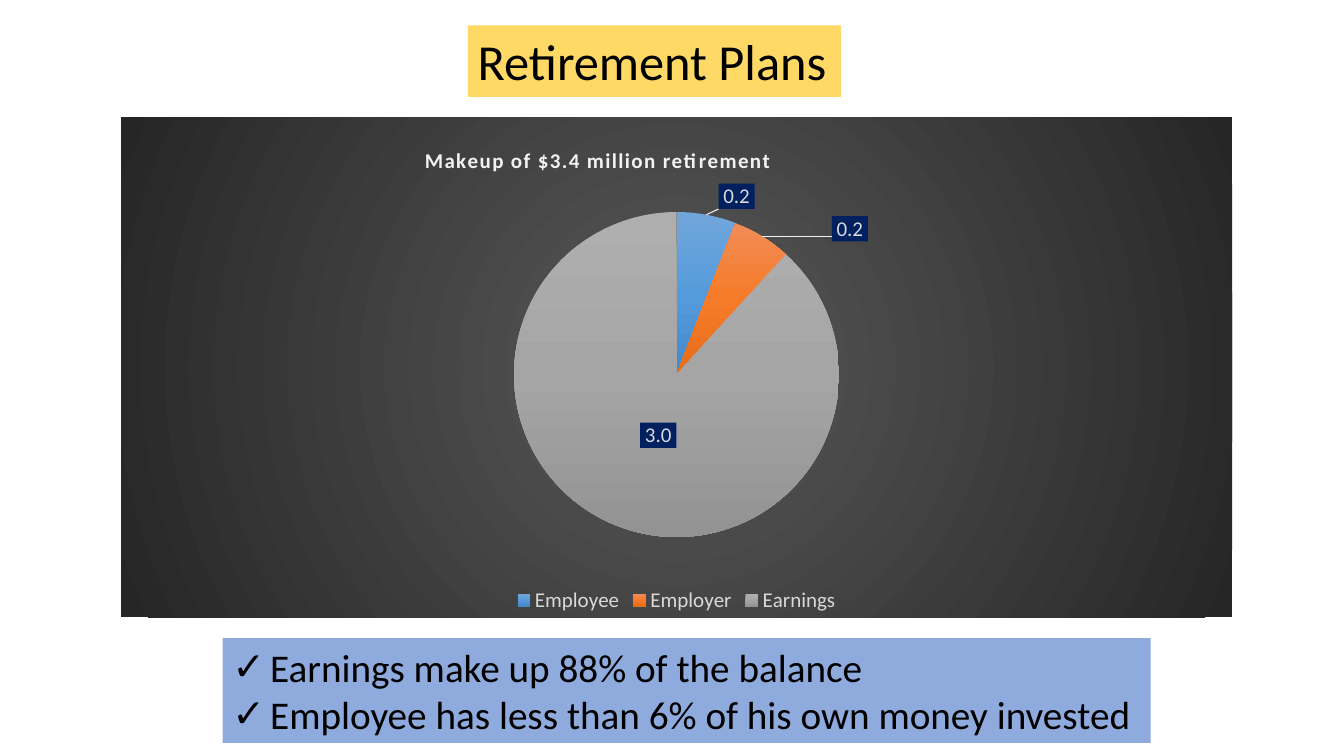
from copy import deepcopy
from dataclasses import dataclass

from pptx import Presentation
from pptx.chart.data import CategoryChartData
from pptx.dml.color import RGBColor
from pptx.enum.chart import XL_CHART_TYPE, XL_LABEL_POSITION, XL_LEGEND_POSITION
from pptx.enum.text import MSO_AUTO_SIZE
from pptx.oxml import parse_xml
from pptx.oxml.ns import nsdecls
from pptx.util import Cm, Pt

PIE = XL_CHART_TYPE.PIE
BOTTOM = XL_LEGEND_POSITION.BOTTOM
OUTSIDE, CENTER = XL_LABEL_POSITION.OUTSIDE_END, XL_LABEL_POSITION.CENTER
FIT_SHAPE = MSO_AUTO_SIZE.SHAPE_TO_FIT_TEXT
NAMES = nsdecls("c", "a")


@dataclass(frozen=True)
class Theme:
    """Colours, font and type sizes of the slide."""
    font: str = "Calibri"
    ink: str = "000000"
    title_fill: str = "FFD966"
    findings_fill: str = "8FAADC"
    label_fill: str = "002060"
    chart_title: str = "F2F2F2"
    chart_text: str = "D9D9D9"
    backdrop: tuple = ("595959", "262626")
    slices: tuple = (
        ("71A6DB", "559BDB", "448ACA"),
        ("F18C57", "F67B28", "E56C19"),
        ("AFAFAF", "A5A5A5", "939393"),
    )
    title_size: int = 36
    findings_size: int = 28
    chart_size: int = 15


THEME = Theme()
NUMBER_FORMAT = r'_(* #,##0.0_);_(* \(#,##0.0\);_(* "-"??_);_(@_)'
SHARES = {"Employee": 0.2, "Employer": 0.2, "Earnings": 3.0}
LABEL_PLACES = ((OUTSIDE, 0.01, 0), (OUTSIDE, 0.06, 0.02), (CENTER, 0.01, -0.03))
FINDINGS = (
    "Earnings make up 88% of the balance",
    "Employee has less than 6% of his own money invested",
)


def style_font(font, size, color, bold=False):
    """Set face, size, colour and weight of a font."""
    font.name, font.size, font.bold = THEME.font, Pt(size), bold
    font.color.rgb = RGBColor.from_string(color)


def add_bullet(para, mark, indent):
    """Give a paragraph a hanging bullet mark."""
    properties = para._p.get_or_add_pPr()
    properties.set("marL", str(indent))
    properties.set("indent", str(-indent))
    properties.append(parse_xml(f'<a:buFont {NAMES} typeface="{THEME.font}"/>'))
    properties.append(parse_xml(f'<a:buChar {NAMES} char="{mark}"/>'))


def add_text(page, box, lines, *, size, fill, mark=None):
    """Add a filled text box with one paragraph per line."""
    shape = page.shapes.add_textbox(*box)
    shape.fill.solid()
    shape.fill.fore_color.rgb = RGBColor.from_string(fill)
    frame = shape.text_frame
    frame.word_wrap = False
    frame.auto_size = FIT_SHAPE
    for number, line in enumerate(lines):
        para = frame.add_paragraph() if number else frame.paragraphs[0]
        if mark:
            add_bullet(para, mark, Cm(0.95))
        span = para.add_run()
        span.text = line
        style_font(span.font, size, THEME.ink)


def gradient(colors, direction):
    """Return a gradient fill with evenly spaced colours."""
    step = 100000 // (len(colors) - 1)
    stops = "".join(
        f'<a:gs pos="{number * step}"><a:srgbClr val="{color}"/></a:gs>'
        for number, color in enumerate(colors)
    )
    return parse_xml(f"<a:gradFill {NAMES}><a:gsLst>{stops}</a:gsLst>{direction}</a:gradFill>")


def set_layout(parent, index, **values):
    """Place a chart part by fractions of the chart area."""
    for old in parent.xpath("c:layout"):
        parent.remove(old)
    parts = "".join(f'<c:{name} val="{value}"/>' for name, value in values.items())
    parent.insert(index, parse_xml(
        f"<c:layout {NAMES}><c:manualLayout>{parts}</c:manualLayout></c:layout>"))


def style_chart_title(chart, text):
    """Add the spaced bold title to the chart."""
    title = chart.chart_title
    span = title.text_frame.paragraphs[0].add_run()
    span.text = text
    style_font(span.font, THEME.chart_size, THEME.chart_title, bold=True)
    span.font._element.set("spc", "100")
    title.include_in_layout = False
    set_layout(title._element, 1, xMode="edge", yMode="edge", x=0.27, y=0.05)


def style_labels(series):
    """Show the values in dark boxes at their places."""
    labels = series.data_labels
    labels.number_format = NUMBER_FORMAT
    labels.number_format_is_linked = False
    labels.show_value = True
    style_font(labels.font, THEME.chart_size, THEME.chart_text)
    element = labels._element
    element.xpath("c:txPr")[0].addprevious(parse_xml(
        f'<c:spPr {NAMES}><a:solidFill><a:srgbClr val="{THEME.label_fill}"/>'
        "</a:solidFill><a:ln><a:noFill/></a:ln></c:spPr>"))
    element.append(parse_xml(
        f'<c:leaderLines {NAMES}><c:spPr><a:ln w="9525"><a:solidFill>'
        f'<a:srgbClr val="{THEME.chart_title}"/></a:solidFill></a:ln></c:spPr></c:leaderLines>'))
    shared = element.xpath("c:numFmt | c:spPr | c:txPr")
    for number, (position, shift_x, shift_y) in enumerate(LABEL_PLACES):
        series.points[number].data_label.position = position
        label = element.xpath("c:dLbl")[number]
        for old in label.xpath("c:numFmt | c:spPr | c:txPr"):
            label.remove(old)
        set_layout(label, 1, x=shift_x, y=shift_y)
        for offset, part in enumerate(shared):
            label.insert(2 + offset, deepcopy(part))


def add_pie(page, box):
    """Add the pie chart of the retirement balance."""
    data = CategoryChartData(number_format="0.0")
    data.categories = list(SHARES)
    data.add_series("Series 1", list(SHARES.values()))
    chart = page.shapes.add_chart(PIE, *box, data).chart
    style_font(chart.font, THEME.chart_size, THEME.chart_text)
    style_chart_title(chart, "Makeup of $3.4 million retirement")

    chart.has_legend = True
    chart.legend.position = BOTTOM
    chart.legend.include_in_layout = False
    style_font(chart.legend.font, THEME.chart_size, THEME.chart_text)

    space = chart._chartSpace
    backdrop = parse_xml(f"<c:spPr {NAMES}><a:ln><a:noFill/></a:ln></c:spPr>")
    backdrop.insert(0, gradient(
        THEME.backdrop,
        '<a:path path="circle"><a:fillToRect l="50000" t="50000" r="50000" b="50000"/></a:path>'))
    space.xpath("c:txPr")[0].addprevious(backdrop)
    set_layout(space.xpath("c:chart/c:plotArea")[0], 0, layoutTarget="inner",
               xMode="edge", yMode="edge", x=0.35, y=0.19, w=0.3, h=0.65)

    plot = chart.plots[0]
    plot.vary_by_categories = True
    series = plot.series[0]
    for number, colors in enumerate(THEME.slices):
        properties = series._element.get_or_add_dPt_for_point(number).get_or_add_spPr()
        properties.append(gradient(colors, '<a:lin ang="5400000" scaled="0"/>'))
    style_labels(series)


def build_page(page):
    """Place the title, the chart and the findings."""
    add_text(page, (Cm(11.79), Cm(0.64), Cm(9.4), Cm(1.8)), ["Retirement Plans"],
             size=THEME.title_size, fill=THEME.title_fill)
    add_text(page, (Cm(5.61), Cm(16.08), Cm(23.39), Cm(2.64)), FINDINGS,
             size=THEME.findings_size, fill=THEME.findings_fill, mark="✓")
    add_pie(page, (Cm(3.05), Cm(2.95), Cm(28), Cm(12.6)))


def main():
    """Build and save the deck."""
    deck = Presentation()
    deck.slide_width, deck.slide_height = Cm(33.87), Cm(19.05)
    build_page(deck.slides.add_slide(deck.slide_layouts[6]))
    deck.save("out.pptx")


if __name__ == "__main__":
    main()
